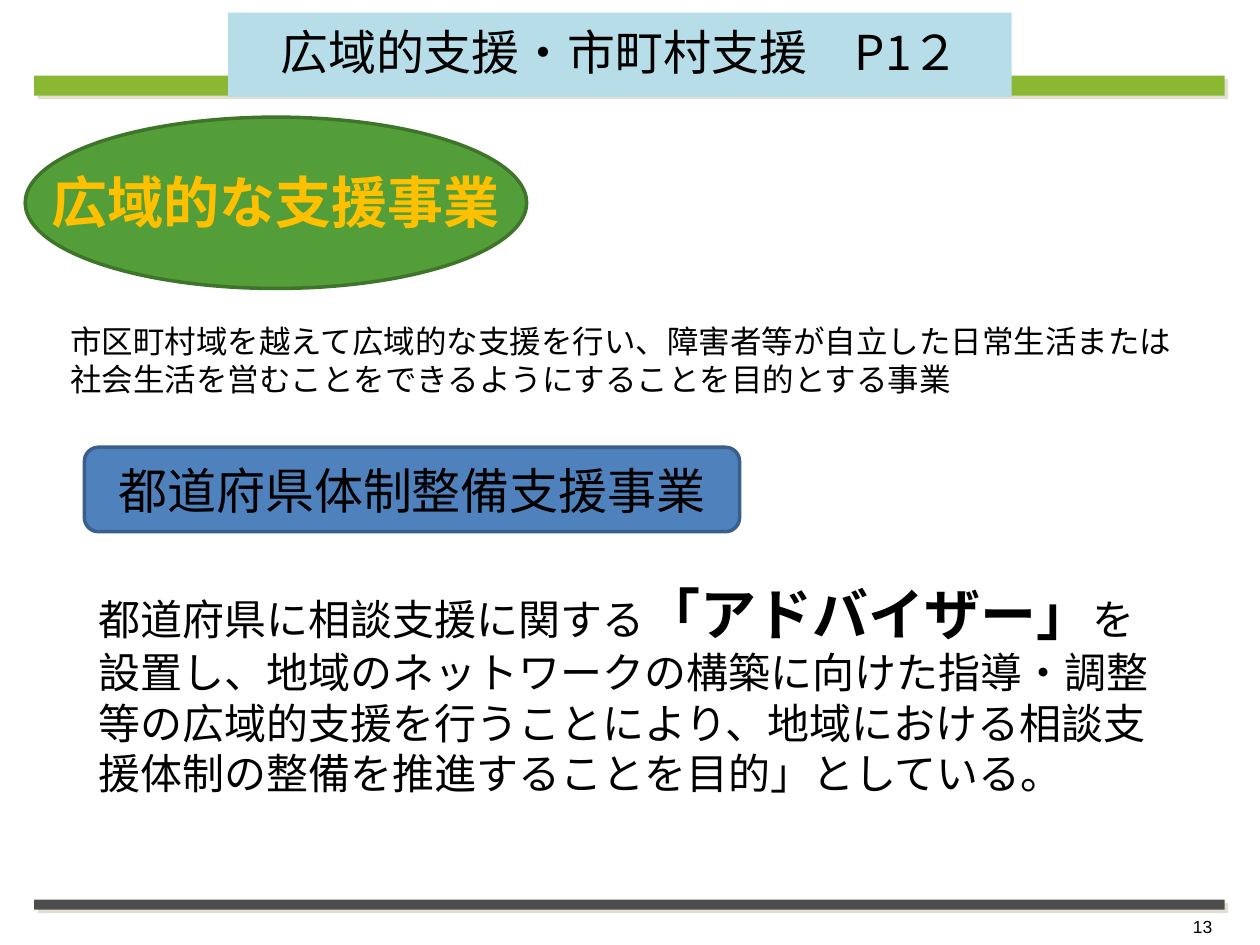
from dataclasses import dataclass

from lxml.etree import SubElement
from pptx import Presentation
from pptx.dml.color import RGBColor
from pptx.enum.shapes import MSO_SHAPE
from pptx.enum.text import MSO_ANCHOR, PP_ALIGN
from pptx.oxml.ns import qn
from pptx.util import Inches, Pt


@dataclass(frozen=True)
class Theme:
    lime: str = "8AB833"
    gray: str = "4D4D4D"
    shadow: str = "E3DED1"
    green: str = "549E39"
    dark_green: str = "3E752A"
    blue: str = "4F81BD"
    dark_blue: str = "3A5F8C"
    pale_blue: str = "B7DEE8"
    gold: str = "FFC000"
    black: str = "000000"
    japanese: str = "Noto Sans CJK JP"
    latin: str = "Arial"
    label: str = "Calibri"
    heading_size: float = 32
    label_size: float = 28
    title_size: float = 27.4
    body_size: float = 24
    lead_size: float = 18
    number_size: float = 10


THEME = Theme()


def style_font(font, size, face=THEME.japanese, color=THEME.black, bold=False):
    font.size = Pt(size)
    font.bold = bold
    font.color.rgb = RGBColor.from_string(color)
    font.name = face
    # The public font name covers Latin letters only.
    SubElement(font._element, qn("a:ea"), typeface=THEME.japanese)


def add_panel(page, box, preset, fill, line=None):
    panel = page.shapes.add_shape(preset, *map(Inches, box))
    panel.shadow.inherit = False
    panel.fill.solid()
    panel.fill.fore_color.rgb = RGBColor.from_string(fill)
    if line:
        panel.line.color.rgb = RGBColor.from_string(line)
        panel.line.width = Pt(2)
    else:
        panel.line.fill.background()
    return panel


def set_text(shape, text="", align=PP_ALIGN.LEFT, anchor=MSO_ANCHOR.TOP,
             margins=(0.1, 0.05), spacing=None):
    """Fill the shape with one paragraph; margins are horizontal, vertical."""
    frame = shape.text_frame
    frame.word_wrap = True
    frame.vertical_anchor = anchor
    frame.margin_left = frame.margin_right = Inches(margins[0])
    frame.margin_top = frame.margin_bottom = Inches(margins[1])
    para = frame.paragraphs[0]
    para.alignment = align
    para.line_spacing = spacing
    if text:
        para.add_run().text = text
    return para


def set_centered(shape, text, **options):
    return set_text(shape, text, PP_ALIGN.CENTER, MSO_ANCHOR.MIDDLE, **options)


def add_text_box(page, box, text="", **options):
    return set_text(page.shapes.add_textbox(*map(Inches, box)), text, **options)


def add_rule(page, box, color):
    """Add a page-wide bar with a hard diagonal shadow."""
    rule = add_panel(page, box, MSO_SHAPE.RECTANGLE, color)
    effects = rule._element.spPr.find(qn("a:effectLst"))
    shadow = SubElement(effects, qn("a:outerShdw"), dist=str(Pt(2.8)),
                        dir=str(45 * 60000), algn="ctr", rotWithShape="0")
    SubElement(shadow, qn("a:srgbClr"), val=THEME.shadow)


def add_title(page, box):
    banner = add_panel(page, box, MSO_SHAPE.RECTANGLE, THEME.pale_blue)
    para = set_centered(banner, "広域的支援・市町村支援　P1２",
                        margins=(0.02, 0.02), spacing=0.9)
    style_font(para.font, THEME.title_size)


def add_heading(page, box):
    oval = add_panel(page, box, MSO_SHAPE.OVAL, THEME.green, THEME.dark_green)
    oval.text_frame.word_wrap = False
    left, top, width, height = box
    caption = page.shapes.add_textbox(
        *map(Inches, (left, top + 0.07, width, height - 0.1)))
    para = set_centered(caption, "広域的な支援事業",
                        margins=(0.02, 0.02), spacing=0.9)
    style_font(para.font, THEME.heading_size, color=THEME.gold, bold=True)


def add_lead(page, box):
    para = add_text_box(
        page, box,
        "市区町村域を越えて広域的な支援を行い、障害者等が自立した日常生活または"
        "社会生活を営むことをできるようにすることを目的とする事業")
    style_font(para.font, THEME.lead_size)


def add_program_label(page, box):
    label = add_panel(page, box, MSO_SHAPE.ROUNDED_RECTANGLE,
                      THEME.blue, THEME.dark_blue)
    para = set_centered(label, "都道府県体制整備支援事業")
    style_font(para.font, THEME.label_size, THEME.label)


def add_description(page, box):
    para = add_text_box(page, box)
    spans = [
        ("都道府県に相談支援に関する", THEME.body_size, False),
        ("「アドバイザー」", THEME.heading_size, True),
        ("を設置し、地域のネットワークの構築に向けた指導・調整等の広域的支援を"
         "行うことにより、地域における相談支援体制の整備を推進することを目的」"
         "としている。", THEME.body_size, False),
    ]
    for text, size, bold in spans:
        span = para.add_run()
        span.text = text
        style_font(span.font, size, THEME.latin, bold=bold)


def add_page_number(page, box):
    para = add_text_box(page, box, "13", align=PP_ALIGN.RIGHT)
    style_font(para.font, THEME.number_size, THEME.latin)


def main():
    deck = Presentation()
    deck.slide_width, deck.slide_height = Inches(10), Inches(7.5)
    page = deck.slides.add_slide(deck.slide_layouts[6])
    add_rule(page, (0.27, 0.6, 9.45, 0.16), THEME.lime)
    add_rule(page, (0.27, 7.14, 9.45, 0.08), THEME.gray)
    add_heading(page, (0.2, 0.93, 3.98, 1.36))
    add_page_number(page, (7.39, 7.22, 2.33, 0.28))
    add_lead(page, (0.46, 2.51, 9.03, 0.71))
    add_program_label(page, (0.67, 3.55, 5.2, 0.67))
    add_title(page, (1.81, 0.1, 6.22, 0.67))
    add_description(page, (0.68, 4.55, 8.65, 1.85))
    deck.save("out.pptx")


if __name__ == "__main__":
    main()
